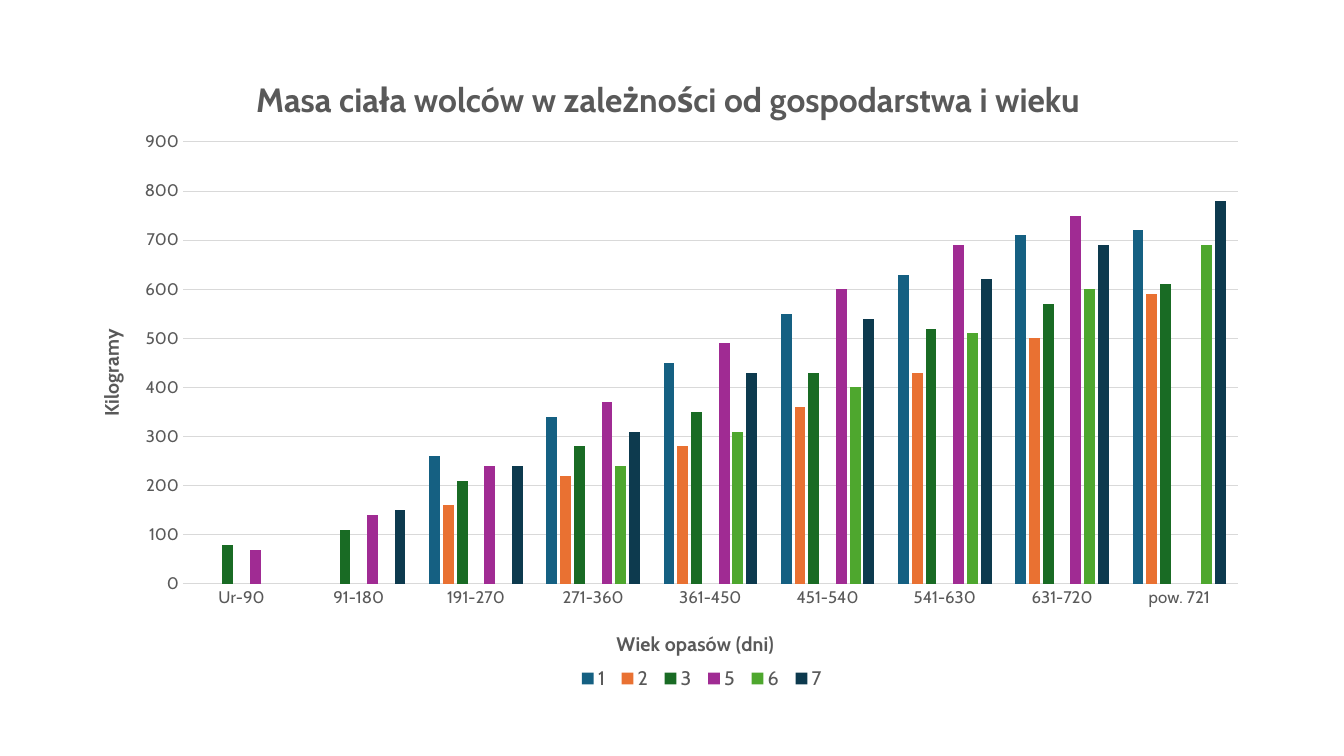
from dataclasses import dataclass
from typing import Optional

import pptx
import pptx.chart.axis
import pptx.chart.chart
import pptx.chart.data
import pptx.dml.color
import pptx.enum.chart
import pptx.oxml
import pptx.oxml.ns
import pptx.text.text
import pptx.util

EMU_PER_PX = 914400 / 100.8
FONT = "Cabin"
COLOURS = {
    "text": "595959",
    "grid": "D9D9D9",
    "blue": "156082",
    "orange": "E97132",
    "green": "196B24",
    "cyan": "0F9ED5",
    "purple": "A02B93",
    "lime": "4EA72E",
    "navy": "0D3A4E",
}


@dataclass(frozen=True)
class Frame:
    left: int
    top: int
    width: int
    height: int


@dataclass(frozen=True)
class Farm:
    name: str
    colour: str
    weights: tuple[Optional[int], ...]


CHART_FRAME = Frame(68, 38, 1194, 673)
PLOT_FRAME = Frame(183, 142, 1055, 442)
LEGEND_FRAME = Frame(572, 664, 260, 29)
TITLE_FRAME = Frame(250, 70, 822, 38)
AGE_TITLE_FRAME = Frame(613, 627, 158, 24)
WEIGHT_TITLE_FRAME = Frame(94, 325, 24, 89)

AGES = ("Ur-90", "91-180", "191-270", "271-360", "361-450",
        "451-540", "541-630", "631-720", "pow. 721")
FARMS = (
    Farm("1", "blue", (None, None, 260, 340, 450, 550, 630, 710, 720)),
    Farm("2", "orange", (None, None, 160, 220, 280, 360, 430, 500, 590)),
    Farm("3", "green", (80, 110, 210, 280, 350, 430, 520, 570, 610)),
    Farm("Series 4", "cyan", (None,) * len(AGES)),
    Farm("5", "purple", (70, 140, 240, 370, 490, 600, 690, 750, None)),
    Farm("6", "lime", (None, None, None, 240, 310, 400, 510, 600, 690)),
    Farm("7", "navy", (None, 150, 240, 310, 430, 540, 620, 690, 780)),
)


def px(length: int) -> int:
    return round(length * EMU_PER_PX)


def rgb(name: str) -> pptx.dml.color.RGBColor:
    return pptx.dml.color.RGBColor.from_string(COLOURS[name])


def style_font(font: pptx.text.text.Font, size: int, bold: bool = False) -> None:
    font.name = FONT
    font.size = pptx.util.Pt(size)
    font.bold = bold
    font.color.rgb = rgb("text")


def chart_xml(tag: str, **attributes: str):
    element = pptx.oxml.parse_xml(f"<c:{tag} {pptx.oxml.ns.nsdecls('c')}/>")
    for name, value in attributes.items():
        element.set(name, value)
    return element


def place(element, frame: Frame, sized: bool, inner: bool = False) -> None:
    for old_layout in element.findall(pptx.oxml.ns.qn("c:layout")):
        element.remove(old_layout)
    layout = chart_xml("layout")
    manual = chart_xml("manualLayout")
    layout.append(manual)
    if inner:
        manual.append(chart_xml("layoutTarget", val="inner"))
    manual.append(chart_xml("xMode", val="edge"))
    manual.append(chart_xml("yMode", val="edge"))
    shares = {
        "x": (frame.left - CHART_FRAME.left) / CHART_FRAME.width,
        "y": (frame.top - CHART_FRAME.top) / CHART_FRAME.height,
    }
    if sized:
        shares["w"] = frame.width / CHART_FRAME.width
        shares["h"] = frame.height / CHART_FRAME.height
    for tag, share in shares.items():
        manual.append(chart_xml(tag, val=f"{share:.4f}"))
    overlay = element.find(pptx.oxml.ns.qn("c:overlay"))
    if overlay is None:
        element.insert(0, layout)
    else:
        overlay.addprevious(layout)


def write_title(title, text: str, size: int, frame: Frame, rotation: int = 0) -> None:
    text_frame = title.text_frame
    run = text_frame.paragraphs[0].add_run()
    run.text = text
    style_font(run.font, size, bold=True)
    body = text_frame._txBody.find(pptx.oxml.ns.qn("a:bodyPr"))
    body.set("rot", str(rotation * 60000))
    body.set("vert", "horz")
    place(title._element, frame, sized=False)


def style_axis(axis: pptx.chart.axis._BaseAxis) -> None:
    axis.major_tick_mark = pptx.enum.chart.XL_TICK_MARK.NONE
    axis.minor_tick_mark = pptx.enum.chart.XL_TICK_MARK.NONE
    style_font(axis.tick_labels.font, 12)


def style_grid_line(line) -> None:
    line.color.rgb = rgb("grid")
    line.width = pptx.util.Pt(0.75)


def style_axes(chart: pptx.chart.chart.Chart) -> None:
    age_axis, weight_axis = chart.category_axis, chart.value_axis
    style_axis(age_axis)
    style_axis(weight_axis)
    style_grid_line(age_axis.format.line)
    weight_axis.format.line.fill.background()
    weight_axis.has_major_gridlines = True
    style_grid_line(weight_axis.major_gridlines.format.line)
    weight_axis.minimum_scale = 0
    weight_axis.maximum_scale = 900
    weight_axis.major_unit = 100
    write_title(age_axis.axis_title, "Wiek opasów (dni)", 14, AGE_TITLE_FRAME)
    write_title(weight_axis.axis_title, "Kilogramy", 14, WEIGHT_TITLE_FRAME, -90)


def style_bars(chart: pptx.chart.chart.Chart) -> None:
    plot = chart.plots[0]
    plot.vary_by_categories = False
    plot.gap_width = 219
    plot.overlap = -27
    for series, farm in zip(plot.series, FARMS):
        series.invert_if_negative = False
        series.format.fill.solid()
        series.format.fill.fore_color.rgb = rgb(farm.colour)


def style_legend(chart: pptx.chart.chart.Chart) -> None:
    chart.has_legend = True
    legend = chart.legend
    legend.position = pptx.enum.chart.XL_LEGEND_POSITION.BOTTOM
    legend.include_in_layout = False
    style_font(legend.font, 14)
    place(legend._element, LEGEND_FRAME, sized=True)
    layout = legend._element.find(pptx.oxml.ns.qn("c:layout"))
    for index, farm in enumerate(FARMS):
        if not any(farm.weights):
            entry = chart_xml("legendEntry")
            entry.append(chart_xml("idx", val=str(index)))
            entry.append(chart_xml("delete", val="1"))
            layout.addprevious(entry)


def main() -> None:
    presentation = pptx.Presentation()
    presentation.slide_width = px(1344)
    presentation.slide_height = px(756)
    slide = presentation.slides.add_slide(presentation.slide_layouts[6])
    chart_data = pptx.chart.data.CategoryChartData()
    chart_data.categories = AGES
    for farm in FARMS:
        chart_data.add_series(farm.name, farm.weights)
    chart = slide.shapes.add_chart(
        pptx.enum.chart.XL_CHART_TYPE.COLUMN_CLUSTERED,
        px(CHART_FRAME.left), px(CHART_FRAME.top),
        px(CHART_FRAME.width), px(CHART_FRAME.height), chart_data,
    ).chart
    style_font(chart.font, 10)
    chart.has_title = True
    write_title(chart.chart_title,
                "Masa ciała wolców w zależności od gospodarstwa i wieku", 24, TITLE_FRAME)
    style_axes(chart)
    style_bars(chart)
    style_legend(chart)
    place(chart._chartSpace.chart.plotArea, PLOT_FRAME, sized=True, inner=True)
    presentation.save("out.pptx")


if __name__ == "__main__":
    main()
